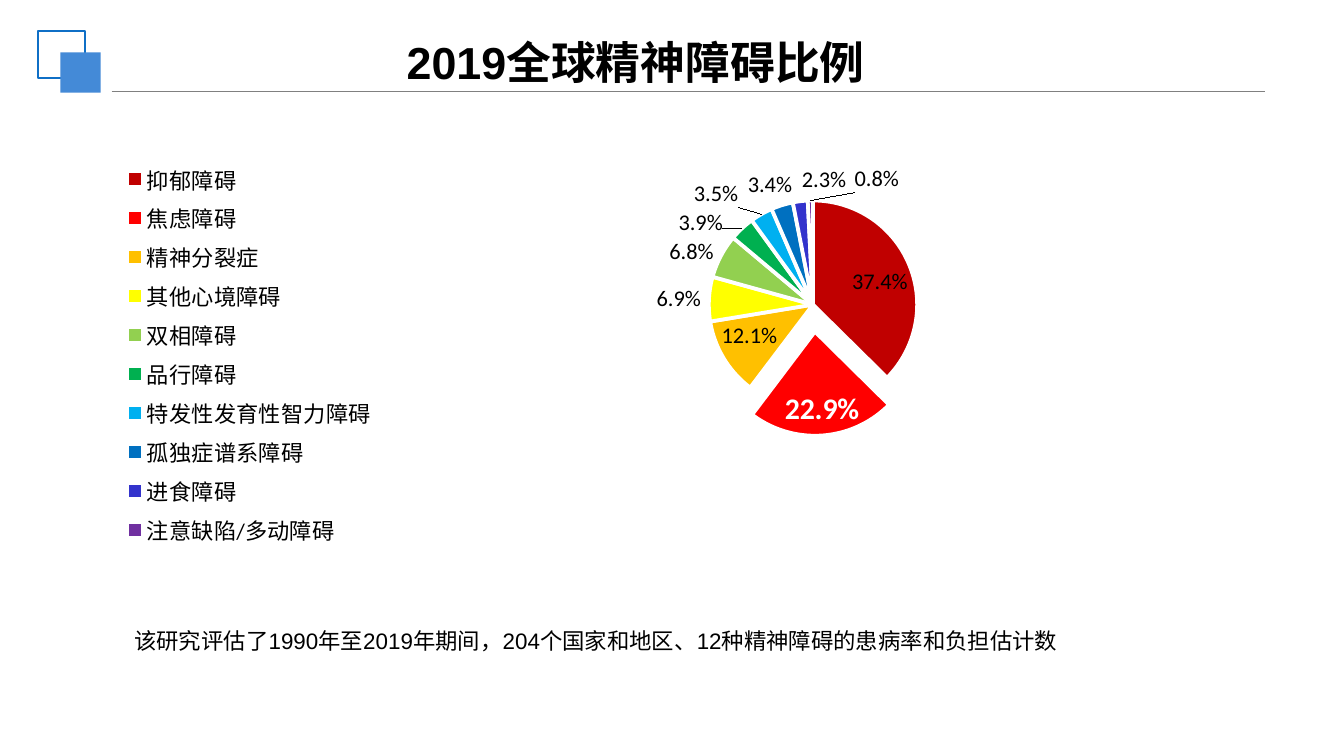
import pptx
import pptx.chart.data
import pptx.dml.color
import pptx.enum.chart
import pptx.enum.shapes
import pptx.enum.text
import pptx.oxml
import pptx.oxml.ns
import pptx.util

Inches, Pt = pptx.util.Inches, pptx.util.Pt

# Content
TITLE = "2019全球精神障碍比例"
NOTE = "该研究评估了1990年至2019年期间，204个国家和地区、12种精神障碍的患病率和负担估计数"
DISORDERS = [
    ("抑郁障碍", 0.374, "C00000"),
    ("焦虑障碍", 0.229, "FF0000"),
    ("精神分裂症", 0.121, "FFC000"),
    ("其他心境障碍", 0.069, "FFFF00"),
    ("双相障碍", 0.068, "92D050"),
    ("品行障碍", 0.039, "00B050"),
    ("特发性发育性智力障碍", 0.035, "00B0F0"),
    ("孤独症谱系障碍", 0.034, "0070C0"),
    ("进食障碍", 0.023, "3333CC"),
    ("注意缺陷/多动障碍", 0.008, "7030A0"),
]
HIGHLIGHT = 1      # slice pulled out of the pie
EXPLOSION = 26     # percent of the radius
LEGEND_AREA = (0, 0.04, 0.25, 0.91)
PIE_AREA = (0.54, 0.14, 0.19, 0.48)

THEME = {
    "text": "000000", "white": "FFFFFF", "rule": "808080",
    "outline": "0F6FC6", "accent": "448AD7",
    "font": "Arial", "chart_font": "Calibri",
    "title": 24, "body": 12, "legend": 11.9, "highlight": 16,
}


def color(name):
    return pptx.dml.color.RGBColor.from_string(THEME.get(name, name))


def style(font, face, size, shade="text", bold=False):
    font.name, font.size, font.bold = THEME[face], Pt(THEME[size]), bold
    font.color.rgb = color(shade)


def write(tf, text, size, bold=False):
    tf.word_wrap = True
    r = tf.paragraphs[0].add_run()
    r.text = text
    style(r.font, "font", size, bold=bold)


def square(s, left, top, side):
    sp = s.shapes.add_shape(pptx.enum.shapes.MSO_SHAPE.RECTANGLE,
                            Inches(left), Inches(top), Inches(side), Inches(side))
    sp.shadow.inherit = False
    return sp


def layout_xml(area):
    parts = "".join(f'<c:{tag} val="{v}"/>' for tag, v in zip("xywh", area))
    return pptx.oxml.parse_xml(
        f'<c:layout {pptx.oxml.ns.nsdecls("c")}><c:manualLayout>'
        '<c:xMode val="edge"/><c:yMode val="edge"/>'
        f'{parts}</c:manualLayout></c:layout>')


def place(element, area):
    """Set the manual layout of a plot area or legend."""
    for old in element.findall(pptx.oxml.ns.qn("c:layout")):
        element.remove(old)
    layout = layout_xml(area)
    position = element.find(pptx.oxml.ns.qn("c:legendPos"))
    if position is None:
        element.insert(0, layout)
    else:
        position.addnext(layout)


prs = pptx.Presentation()
prs.slide_width = Inches(10)
prs.slide_height = prs.slide_width * 9 // 16
s = prs.slides.add_slide(prs.slide_layouts[5])

# Header rule and squares
rule = s.shapes.add_connector(pptx.enum.shapes.MSO_CONNECTOR.STRAIGHT,
                              Inches(0.83), Inches(0.68), Inches(9.41), Inches(0.68))
rule.line.color.rgb = color("rule")
rule.line.width = Pt(0.75)
rule._element.spPr.append(pptx.oxml.parse_xml(
    f'<a:effectLst {pptx.oxml.ns.nsdecls("a")}/>'))

frame = square(s, 0.28, 0.23, 0.35)
frame.fill.background()
frame.line.color.rgb = color("outline")
frame.line.width = Pt(1)
block = square(s, 0.45, 0.39, 0.3)
block.fill.solid()
block.fill.fore_color.rgb = color("accent")
block.line.fill.background()

# Title
title = s.shapes.title
title.left, title.top = Inches(0.83), Inches(0.2)
title.width, title.height = Inches(7.8), Inches(0.59)
title.text_frame.vertical_anchor = pptx.enum.text.MSO_ANCHOR.MIDDLE
title.text_frame.margin_bottom = Inches(0.12)
write(title.text_frame, TITLE, "title", bold=True)
title.text_frame.paragraphs[0].alignment = pptx.enum.text.PP_ALIGN.CENTER

# Pie chart
data = pptx.chart.data.CategoryChartData(number_format="0.0%")
data.categories = [name for name, _, _ in DISORDERS]
data.add_series("Series 1", [value for _, value, _ in DISORDERS])
chart = s.shapes.add_chart(pptx.enum.chart.XL_CHART_TYPE.PIE, Inches(0.83), Inches(1.04),
                           Inches(8.22), Inches(3.23), data).chart
chart.has_title = False
style(chart.font, "chart_font", "body")
chart.has_legend = True
chart.legend.position = pptx.enum.chart.XL_LEGEND_POSITION.LEFT
chart.legend.include_in_layout = False
style(chart.legend.font, "chart_font", "legend")
place(chart.legend._element, LEGEND_AREA)

plot = chart.plots[0]
plot.vary_by_categories = True
place(plot._element.getparent(), PIE_AREA)
series = plot.series[0]
labels = series.data_labels
labels.show_value = True
labels.number_format = "0.0%"
labels.number_format_is_linked = False
labels.position = pptx.enum.chart.XL_LABEL_POSITION.BEST_FIT
style(labels.font, "chart_font", "body")

for i, (_, _, shade) in enumerate(DISORDERS):
    fmt = series.points[i].format
    fmt.fill.solid()
    fmt.fill.fore_color.rgb = color(shade)
    fmt.line.color.rgb = color("white")
    fmt.line.width = Pt(2)

# Highlighted slice
point = series.points[HIGHLIGHT]
point.format.fill._xPr.addprevious(pptx.oxml.parse_xml(
    f'<c:explosion {pptx.oxml.ns.nsdecls("c")} val="{EXPLOSION}"/>'))
style(point.data_label.font, "chart_font", "highlight", "white", bold=True)
point.data_label.position = pptx.enum.chart.XL_LABEL_POSITION.INSIDE_END

# Note
note = s.shapes.add_textbox(Inches(0.9), Inches(4.62), Inches(8.32), Inches(0.3))
write(note.text_frame, NOTE, "body")

prs.save("out.pptx")
